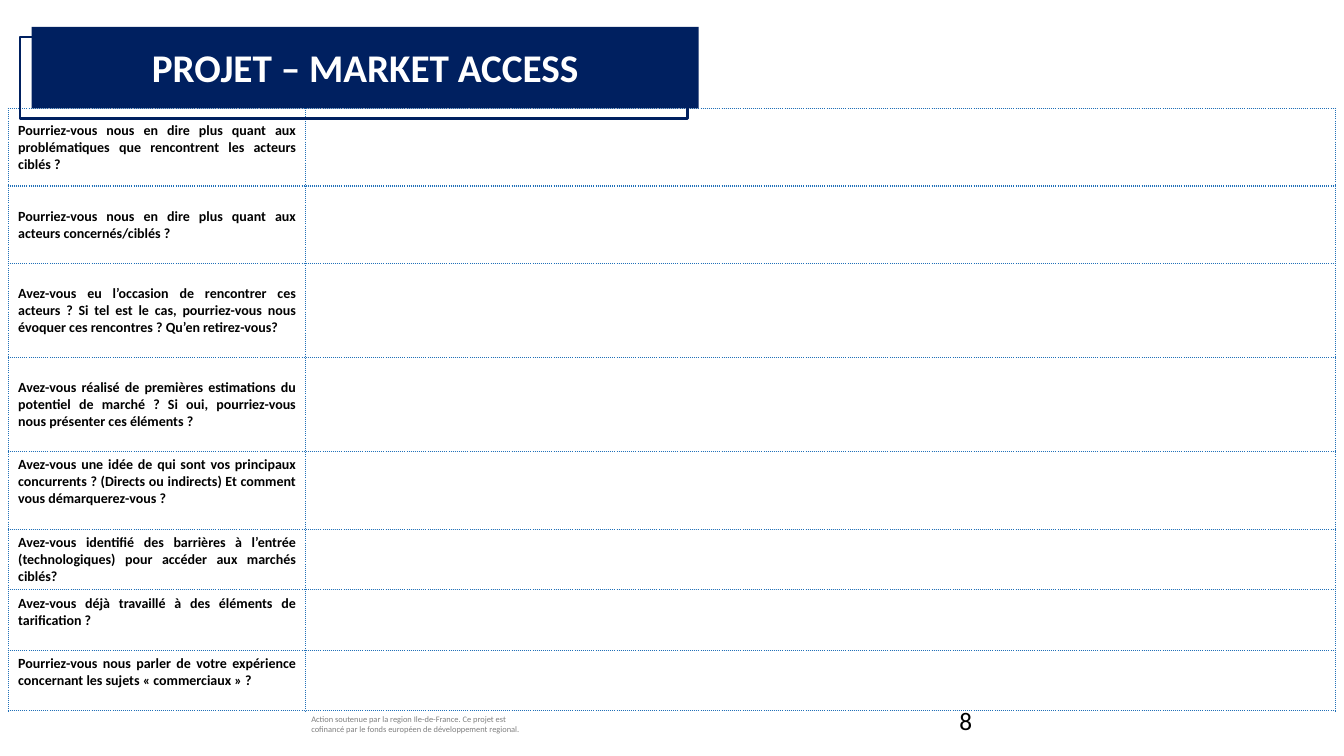
from lxml import etree
from pptx import Presentation
from pptx.dml.color import RGBColor
from pptx.enum.shapes import MSO_SHAPE
from pptx.enum.text import MSO_ANCHOR, PP_ALIGN
from pptx.oxml.ns import qn
from pptx.util import Pt

NAVY = RGBColor(0x00, 0x20, 0x60)
BLUE = RGBColor(0x20, 0x70, 0xB8)
GREY = RGBColor(0x80, 0x80, 0x80)
BLACK = RGBColor(0, 0, 0)
WHITE = RGBColor(0xFF, 0xFF, 0xFF)
RECT = MSO_SHAPE.RECTANGLE
TOP, MIDDLE = MSO_ANCHOR.TOP, MSO_ANCHOR.MIDDLE
LEFT, CENTER, JUSTIFY = PP_ALIGN.LEFT, PP_ALIGN.CENTER, PP_ALIGN.JUSTIFY
FONT = "Calibri"

# Question, row height, anchor
ROWS = [
    ("Pourriez-vous nous en dire plus quant aux problématiques que "
     "rencontrent les acteurs ciblés ? ", 55.4, MIDDLE),
    ("Pourriez-vous nous en dire plus quant aux acteurs "
     "concernés/ciblés ? ", 55.4, MIDDLE),
    ("Avez-vous eu l’occasion de rencontrer ces acteurs ? Si tel est le cas, "
     "pourriez-vous nous évoquer ces rencontres ? Qu’en retirez-vous?  ",
     67.2, MIDDLE),
    ("Avez-vous réalisé de premières estimations du potentiel de marché ? "
     "Si oui, pourriez-vous nous présenter ces éléments ?", 67.2, MIDDLE),
    ("Avez-vous une idée de qui sont vos principaux concurrents ? (Directs ou "
     "indirects) Et comment vous démarquerez-vous ? ", 55.4, TOP),
    ("Avez-vous identifié des barrières à l’entrée (technologiques) pour "
     "accéder aux marchés ciblés? ", 43.2, TOP),
    ("Avez-vous déjà travaillé à des éléments de tarification ?", 43.2, TOP),
    ("Pourriez-vous nous parler de votre expérience concernant les sujets "
     "« commerciaux » ?", 43.2, TOP),
]


def write(frame, text, size, color, bold=False, align=LEFT):
    frame.text = text
    para = frame.paragraphs[0]
    para.alignment = align
    font = para.font
    font.name, font.size, font.bold = FONT, Pt(size), bold
    font.color.rgb = color


def add_label(slide, box, text, size, color, anchor=TOP):
    label = slide.shapes.add_textbox(*map(Pt, box))
    frame = label.text_frame
    frame.word_wrap = True
    frame.vertical_anchor = anchor
    write(frame, text, size, color)


def set_border(cell):
    """Draw a dotted line on all four sides; fills must be set afterwards."""
    props = cell._tc.get_or_add_tcPr()
    for side in ("lnL", "lnR", "lnT", "lnB"):
        line = etree.SubElement(props, qn(f"a:{side}"), w=str(Pt(1)))
        fill = etree.SubElement(line, qn("a:solidFill"))
        etree.SubElement(fill, qn("a:srgbClr"), val=str(BLUE))
        etree.SubElement(line, qn("a:prstDash"), val="sysDot")


def add_grid(slide, box):
    left, top, width = box
    height = sum(row[1] for row in ROWS)
    table = slide.shapes.add_table(
        len(ROWS), 2, Pt(left), Pt(top), Pt(width), Pt(height)).table
    table.first_row = table.horz_banding = False
    first = 212.6
    table.columns[0].width = Pt(first)
    table.columns[1].width = Pt(width - first)
    for index, (text, high, anchor) in enumerate(ROWS):
        table.rows[index].height = Pt(high)
        for cell in table.rows[index].cells:
            set_border(cell)
            cell.fill.background()
        cell = table.cell(index, 0)
        cell.vertical_anchor = anchor
        write(cell.text_frame, text, 10, BLACK, True, JUSTIFY)


def add_banner(slide, box, text):
    """Put the title on a solid bar with an offset outline behind it."""
    left, top, width, height = box
    frame = slide.shapes.add_shape(
        RECT, Pt(left - 8), Pt(top + 7.2), Pt(width), Pt(height))
    frame.fill.background()
    frame.line.color.rgb = NAVY
    frame.line.width = Pt(1.5)
    bar = slide.shapes.add_shape(RECT, *map(Pt, box))
    bar.fill.solid()
    bar.fill.fore_color.rgb = NAVY
    bar.line.fill.background()
    for shape in (frame, bar):
        shape.shadow.inherit = False

    title = slide.shapes.title
    title.left, title.top = Pt(left), Pt(top + 8)
    title.width, title.height = Pt(width), Pt(41.2)
    title.text_frame.vertical_anchor = MIDDLE
    write(title.text_frame, text, 28, WHITE, True, CENTER)
    slide.shapes._spTree.append(title._element)  # bring to the front


def main():
    deck = Presentation()
    deck.slide_width, deck.slide_height = Pt(960), Pt(540)
    slide = deck.slides.add_slide(deck.slide_layouts[5])
    add_label(slide, (215.3, 506.2, 171.4, 21.6),
              "Action soutenue par la region Ile-de-France. Ce projet est "
              "cofinancé par le fonds européen de développement regional.",
              6, GREY)
    add_grid(slide, (5.8, 77.5, 948.2))
    add_banner(slide, (22.5, 19.2, 476.6, 58.3), "PROJET – MARKET ACCESS")
    add_label(slide, (678.2, 500.4, 216, 28.8), "8", 18, BLACK, MIDDLE)
    deck.save("out.pptx")


if __name__ == "__main__":
    main()
